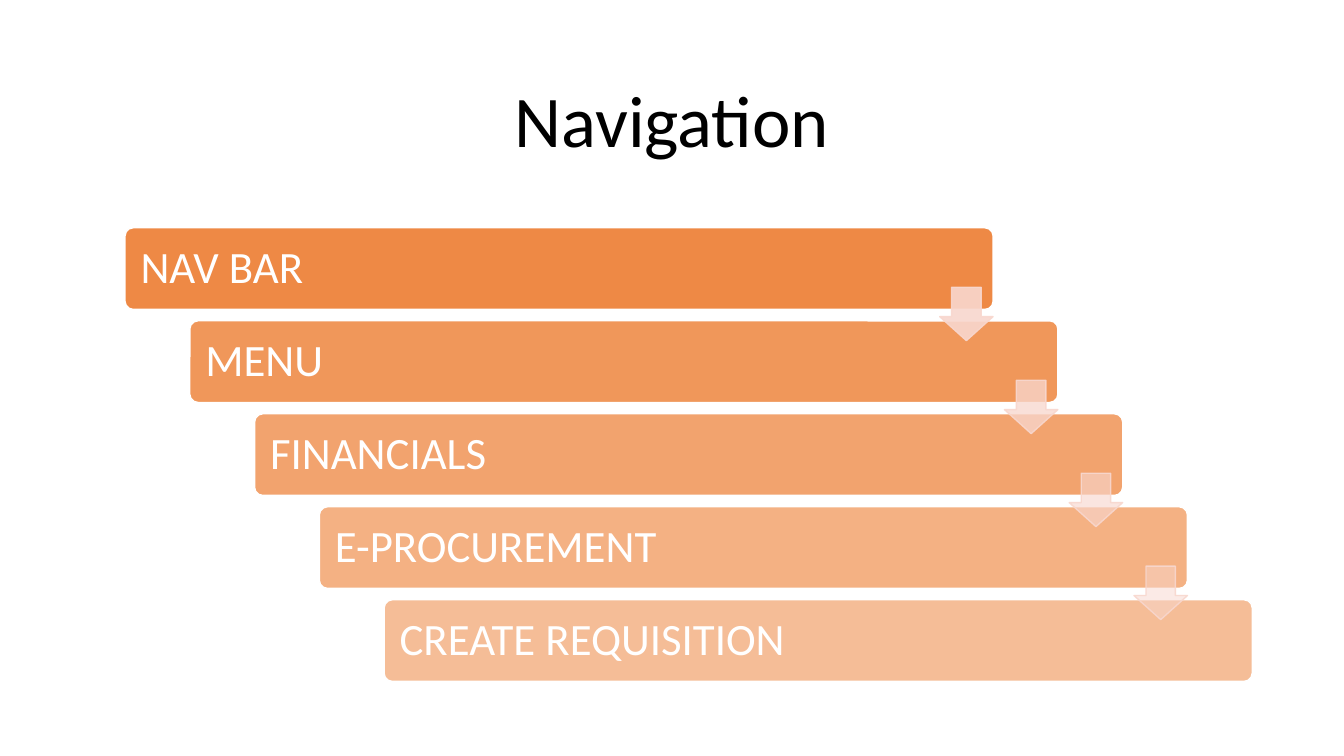
import pptx
import pptx.dml.color
import pptx.enum.shapes
import pptx.enum.text
import pptx.oxml
import pptx.oxml.ns
import pptx.util

SLIDE_W, SLIDE_H = 13.33, 7.5
FONT = "Calibri"
ORANGE, PINK, WHITE, BLACK = "ED7D31", "F8D7CE", "FFFFFF", "000000"

# Staircase: each step moves one column right and one row down
STAIR_LEFT, STAIR_TOP = 1.24, 2.26
COLUMN, ROW = 0.6425, 0.9225
BAR_W, BAR_H = 8.61, 0.81
ARROW_SIZE, ARROW_DROP = 0.53, 0.59
STEPS = ["NAV BAR", "MENU", "FINANCIALS", "E-PROCUREMENT", "CREATE REQUISITION"]

Inches, Pt = pptx.util.Inches, pptx.util.Pt
SHAPES = pptx.enum.shapes.MSO_SHAPE


def rgb(color):
    return pptx.dml.color.RGBColor.from_string(color)


def set_alpha(fill_parent, percent):
    """Make the solid fill inside fill_parent partly transparent."""
    color = fill_parent.find(pptx.oxml.ns.qn("a:solidFill"))[0]
    alpha = pptx.oxml.parse_xml(
        f'<a:alpha {pptx.oxml.ns.nsdecls("a")} val="{round(percent * 1000)}"/>')
    color.append(alpha)


def add_block(slide, kind, left, top, width, height, fill, alpha, line, adjustments):
    block = slide.shapes.add_shape(
        kind, Inches(left), Inches(top), Inches(width), Inches(height))
    block.shadow.inherit = False
    for index, value in enumerate(adjustments):
        block.adjustments[index] = value
    block.fill.solid()
    block.fill.fore_color.rgb = rgb(fill)
    set_alpha(block.fill._xPr, alpha)
    block.line.color.rgb = rgb(line)
    block.line.width = Pt(1)
    return block


def write(frame, text, size, color, align):
    frame.word_wrap = True
    frame.vertical_anchor = pptx.enum.text.MSO_ANCHOR.MIDDLE
    paragraph = frame.paragraphs[0]
    paragraph.text = text
    paragraph.alignment = align
    paragraph.line_spacing = 0.9
    paragraph.font.name = FONT
    paragraph.font.size = Pt(size)
    paragraph.font.color.rgb = rgb(color)


def add_title(slide, text):
    width, height = 11.5, 1.24
    title = slide.shapes.add_textbox(
        Inches((SLIDE_W - width) / 2), Inches(0.61), Inches(width), Inches(height))
    write(title.text_frame, text, 52, BLACK, pptx.enum.text.PP_ALIGN.CENTER)


def add_step(slide, step, text):
    bar = add_block(slide, SHAPES.ROUNDED_RECTANGLE,
                    STAIR_LEFT + step * COLUMN, STAIR_TOP + step * ROW,
                    BAR_W, BAR_H, ORANGE, 90 - 10 * step, WHITE, [0.1])
    frame = bar.text_frame
    frame.margin_left = frame.margin_right = Inches(0.13)
    frame.margin_top = frame.margin_bottom = Inches(0.13)
    write(frame, text, 32, WHITE, pptx.enum.text.PP_ALIGN.LEFT)


def add_step_arrow(slide, step):
    # The arrow ends flush with the right side of the bar it leaves
    left = STAIR_LEFT + step * COLUMN + BAR_W - ARROW_SIZE
    top = STAIR_TOP + step * ROW + ARROW_DROP
    fade = 40 / (len(STEPS) - 2)
    arrow = add_block(slide, SHAPES.DOWN_ARROW, left, top, ARROW_SIZE, ARROW_SIZE,
                      PINK, 90 - fade * step, PINK, [0.55, 0.45])
    set_alpha(arrow.line._ln, 90)


def main():
    deck = pptx.Presentation()
    deck.slide_width, deck.slide_height = Inches(SLIDE_W), Inches(SLIDE_H)
    slide = deck.slides.add_slide(deck.slide_layouts[6])

    add_title(slide, "Navigation")

    # Bars first, so that the arrows lie on top of them
    for step, text in enumerate(STEPS):
        add_step(slide, step, text)
    for step in range(len(STEPS) - 1):
        add_step_arrow(slide, step)

    deck.save("out.pptx")


if __name__ == "__main__":
    main()
